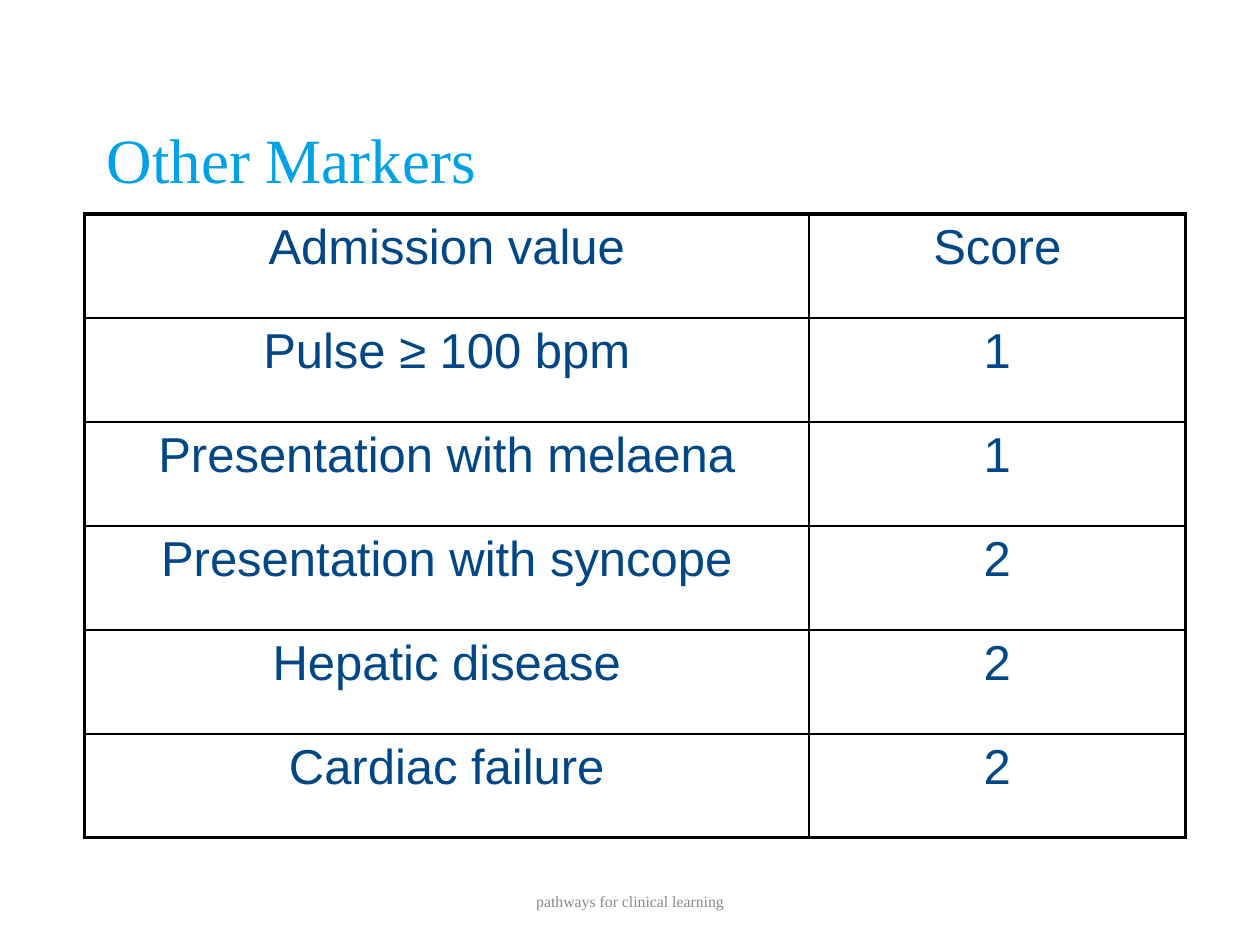
"""Build the slide of other admission markers and their scores."""
from lxml.etree import SubElement
from pptx import Presentation
from pptx.dml.color import RGBColor
from pptx.enum.text import MSO_ANCHOR as Anchor, PP_ALIGN as Align
from pptx.oxml.ns import qn
from pptx.util import Inches, Pt

COLORS = {"title": "00A1E5", "cell": "014785", "footer": "888888", "border": "000000"}
TITLE = "Other Markers"
FOOTER = "pathways for clinical learning"
ROWS = [
    ("Admission value", "Score"),
    ("Pulse ≥ 100 bpm", "1"),
    ("Presentation with melaena", "1"),
    ("Presentation with syncope", "2"),
    ("Hepatic disease", "2"),
    ("Cardiac failure", "2"),
]
COLUMN_WIDTHS = (5.75, 2.99)
TABLE_LEFT, TABLE_TOP, TABLE_HEIGHT = 0.67, 1.7, 4.95
OUTER_LINE, INNER_LINE = Pt(2.25), Pt(1)


def write(frame, text, size, font, color, align):
    para = frame.paragraphs[0]
    para.alignment = align
    span = para.add_run()
    span.text = text
    span.font.size = Pt(size)
    span.font.name = font
    span.font.color.rgb = RGBColor.from_string(COLORS[color])


def add_text(page, place, text, size, color, align, anchor):
    box = page.shapes.add_textbox(*map(Inches, place))
    box.text_frame.word_wrap = True
    box.text_frame.vertical_anchor = anchor
    write(box.text_frame, text, size, "Times New Roman", color, align)


def add_borders(cell, outer_sides):
    properties = cell._tc.get_or_add_tcPr()
    for side, outer in outer_sides.items():
        width = OUTER_LINE if outer else INNER_LINE
        line = SubElement(properties, qn(f"a:ln{side}"), w=str(width))
        fill = SubElement(line, qn("a:solidFill"))
        SubElement(fill, qn("a:srgbClr"), val=COLORS["border"])


def add_score_table(page):
    place = (TABLE_LEFT, TABLE_TOP, sum(COLUMN_WIDTHS), TABLE_HEIGHT)
    table = page.shapes.add_table(len(ROWS), len(COLUMN_WIDTHS), *map(Inches, place)).table
    table.first_row = table.horz_banding = False
    for column, width in zip(table.columns, COLUMN_WIDTHS):
        column.width = Inches(width)
    last_row, last_column = len(ROWS) - 1, len(COLUMN_WIDTHS) - 1
    for r, values in enumerate(ROWS):
        table.rows[r].height = Inches(TABLE_HEIGHT / len(ROWS))
        for c, value in enumerate(values):
            cell = table.cell(r, c)
            write(cell.text_frame, value, 28, "Arial", "cell", Align.CENTER)
            add_borders(cell, {"L": c == 0, "R": c == last_column,
                               "T": r == 0, "B": r == last_row})
            cell.fill.background()


def main():
    deck = Presentation()
    deck.slide_width, deck.slide_height = Inches(10), Inches(7.5)
    page = deck.slides.add_slide(deck.slide_layouts[6])
    add_text(page, (3.31, 6.95, 3.38, 0.4), FOOTER, 9, "footer", Align.CENTER, Anchor.MIDDLE)
    add_score_table(page)
    add_text(page, (0.75, 0.91, 4.72, 0.7), TITLE, 36, "title", Align.LEFT, Anchor.TOP)
    deck.save("out.pptx")


if __name__ == "__main__":
    main()
